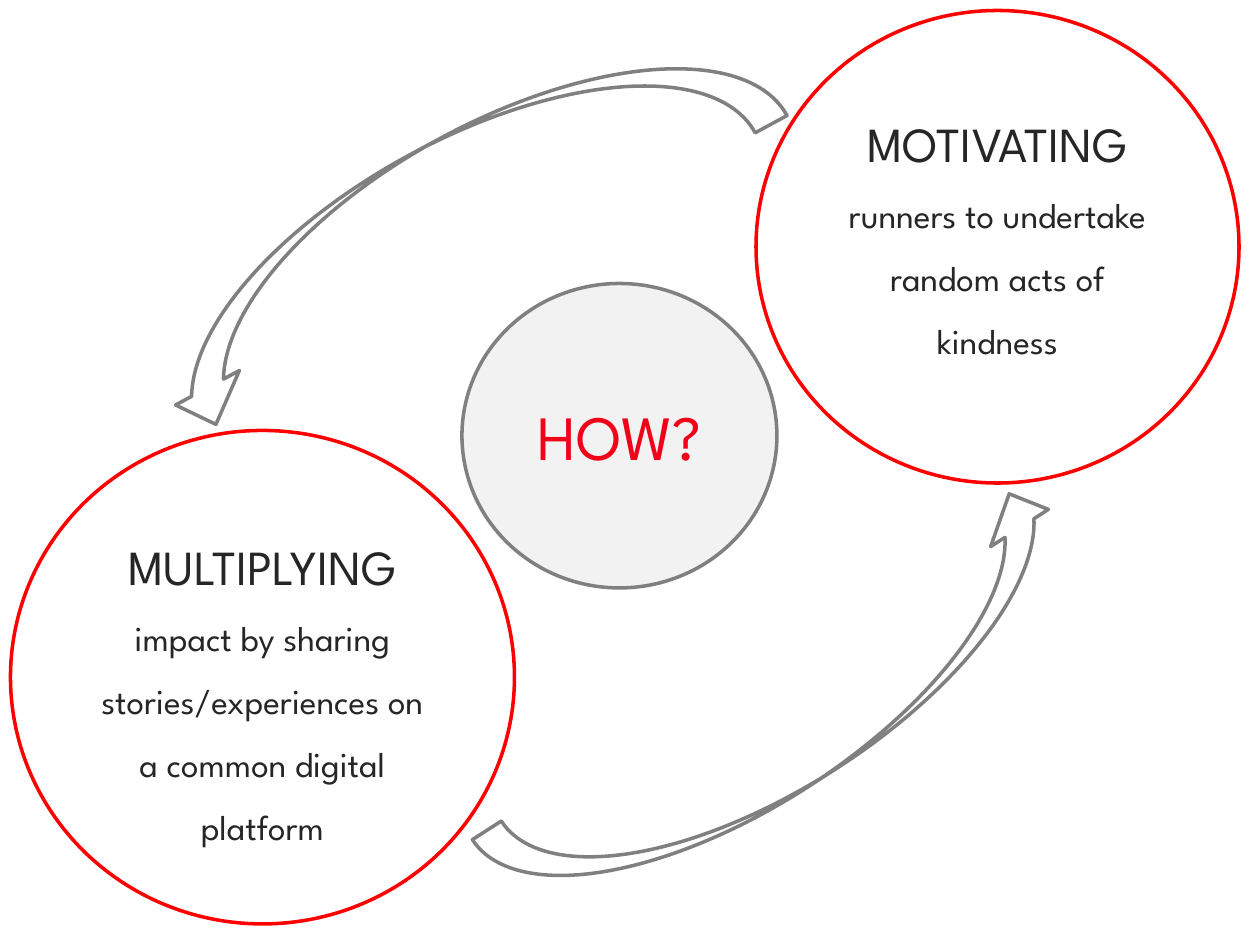
from dataclasses import dataclass

from pptx import Presentation
from pptx.dml.color import RGBColor
from pptx.enum.shapes import MSO_SHAPE
from pptx.enum.text import MSO_ANCHOR, PP_ALIGN
from pptx.util import Pt


@dataclass(frozen=True)
class Theme:
    font: str = "League Spartan"
    text: RGBColor = RGBColor(0x26, 0x26, 0x26)
    accent: RGBColor = RGBColor(0xF0, 0x02, 0x19)
    ring: RGBColor = RGBColor(0xFF, 0x00, 0x00)
    outline: RGBColor = RGBColor(0x80, 0x80, 0x80)
    hub_fill: RGBColor = RGBColor(0xF2, 0xF2, 0xF2)
    line_width: float = 2
    hub_size: int = 36
    heading_size: int = 28
    body_size: int = 20


THEME = Theme()


def add_outlined(slide, kind, box, line_color, fill_color=None):
    shape = slide.shapes.add_shape(kind, *(Pt(length) for length in box))
    shape.shadow.inherit = False
    if fill_color is None:
        shape.fill.background()
    else:
        shape.fill.solid()
        shape.fill.fore_color.rgb = fill_color
    shape.line.color.rgb = line_color
    shape.line.width = Pt(THEME.line_width)
    return shape


def add_text(paragraph, text, size, color):
    run = paragraph.add_run()
    run.text = text
    run.font.name = THEME.font
    run.font.size = Pt(size)
    run.font.color.rgb = color


def add_hub(slide, box, text):
    hub = add_outlined(slide, MSO_SHAPE.OVAL, box, THEME.outline, THEME.hub_fill)
    hub.text_frame.vertical_anchor = MSO_ANCHOR.MIDDLE
    paragraph = hub.text_frame.paragraphs[0]
    paragraph.alignment = PP_ALIGN.CENTER
    add_text(paragraph, text, THEME.hub_size, THEME.accent)


def add_step(slide, box, heading, body, bottom_margin):
    circle = add_outlined(slide, MSO_SHAPE.OVAL, box, THEME.ring)
    text_frame = circle.text_frame
    text_frame.word_wrap = True
    text_frame.vertical_anchor = MSO_ANCHOR.BOTTOM
    text_frame.margin_top = 0
    text_frame.margin_bottom = Pt(bottom_margin)
    paragraph = text_frame.paragraphs[0]
    paragraph.alignment = PP_ALIGN.CENTER
    paragraph.line_spacing = 1.5
    add_text(paragraph, f"{heading} ", THEME.heading_size, THEME.text)
    add_text(paragraph, body, THEME.body_size, THEME.text)


def add_cycle_arrow(slide, box, rotation):
    arrow = add_outlined(slide, MSO_SHAPE.CURVED_UP_ARROW, box, THEME.outline)
    arrow.rotation = rotation


def main():
    presentation = Presentation()
    presentation.slide_width = Pt(720)
    presentation.slide_height = Pt(540)
    slide = presentation.slides.add_slide(presentation.slide_layouts[6])

    add_hub(slide, (264, 162, 180, 174), "HOW?")
    add_step(slide, (432, 6, 276, 270), "MOTIVATING",
             "runners to undertake random acts of kindness", 29.8)
    add_step(slide, (6, 246, 288, 282), "MULTIPLYING",
             "impact by sharing stories/experiences on a common digital platform", 2.5)
    add_cycle_arrow(slide, (260.6, 369.4, 384.5, 78.5), 327.2)
    add_cycle_arrow(slide, (61.9, 81.4, 391.7, 82.8), 151.6)

    presentation.save("out.pptx")


if __name__ == "__main__":
    main()
